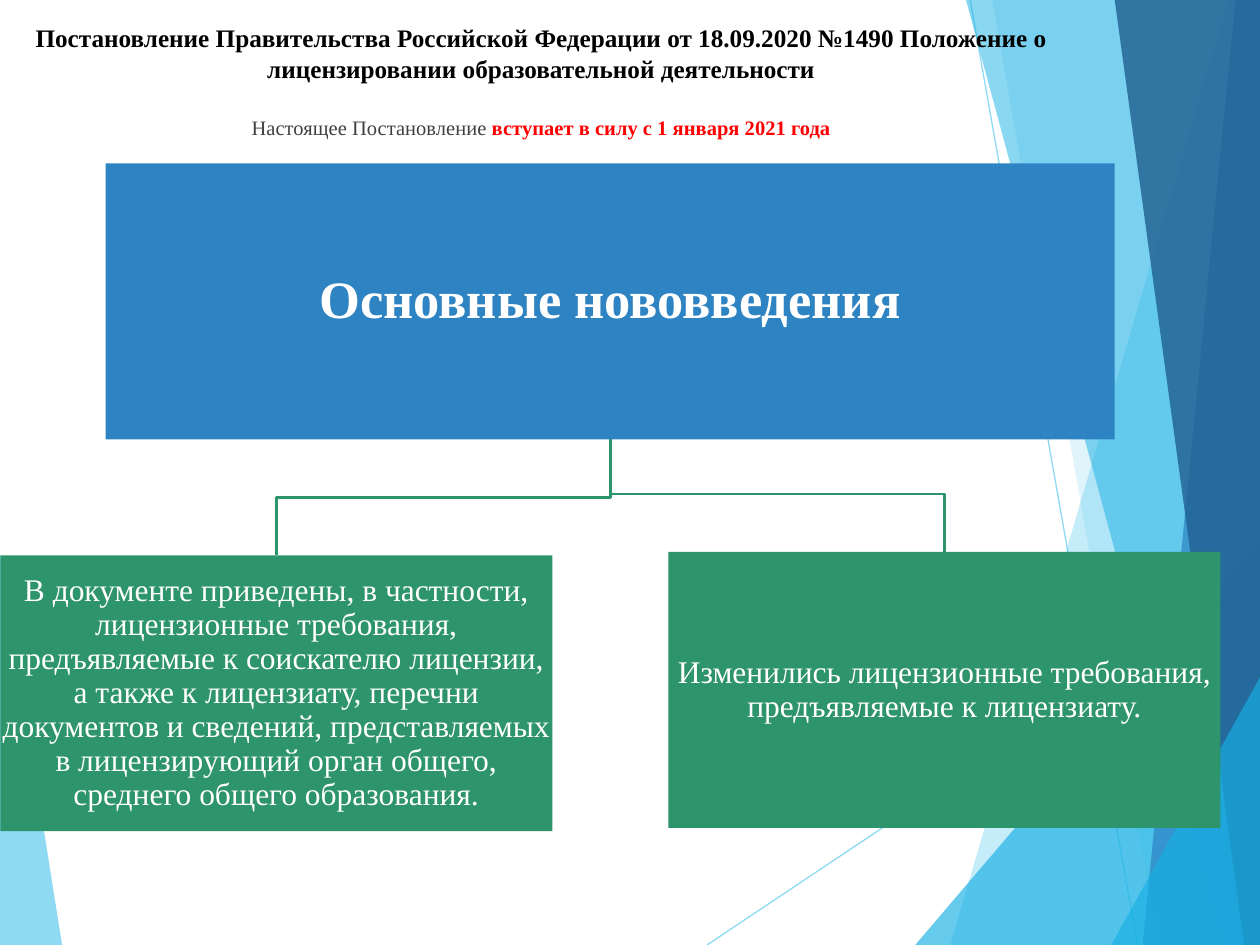
"""Builds a slide on the new licensing rules as a two-branch chart."""
from pptx import Presentation
from pptx.dml.color import RGBColor
from pptx.enum.shapes import MSO_CONNECTOR as Link, MSO_SHAPE as Form
from pptx.enum.text import MSO_ANCHOR as Anchor, MSO_AUTO_SIZE as Fit, PP_ALIGN as Align
from pptx.oxml import parse_xml
from pptx.oxml.ns import nsdecls, qn
from pptx.util import Pt

WHITE = RGBColor(0xFF, 0xFF, 0xFF)
BLACK = RGBColor(0, 0, 0)
GREY = RGBColor(0x40, 0x40, 0x40)
RED = RGBColor(0xFF, 0, 0)
SKY = RGBColor(0x5F, 0xCB, 0xEF)
CYAN = RGBColor(0x17, 0xB0, 0xE4)
BLUE = RGBColor(0x2E, 0x83, 0xC3)
NAVY = RGBColor(0x22, 0x62, 0x92)
GREEN = RGBColor(0x2E, 0x94, 0x6B)
WIDE, HIGH = 720, 540


def assign(item, values):
    """Set each attribute of an item from a dict."""
    for name, value in values.items():
        setattr(item, name, value)


def fade(props, alpha):
    """Give a solid colour an opacity in percent."""
    tint = f'<a:alpha {nsdecls("a")} val="{alpha * 1000}"/>'
    props.find(".//" + qn("a:srgbClr")).append(parse_xml(tint))


class Board:
    """Holds the text style and the current slide."""

    def __init__(self, slide, face):
        self.shapes, self.face = slide.shapes, face

    def label(self, para, text, size, color, bold=False):
        """Add a styled run to a paragraph."""
        run = para.add_run()
        run.text = text
        assign(run.font, {"name": self.face, "size": Pt(size), "bold": bold})
        run.font.color.rgb = color

    def trace(self, points, close):
        """Draw an outline through points."""
        start, *rest = [(Pt(x), Pt(y)) for x, y in points]
        pen = self.shapes.build_freeform(*start)
        pen.add_line_segments(rest, close=close)
        shape = pen.convert_to_shape()
        shape.shadow.inherit = False
        return shape

    def paint(self, shape, color):
        """Fill a shape and drop its outline."""
        shape.fill.solid()
        shape.fill.fore_color.rgb = color
        shape.line.fill.background()

    def band(self, x, y, foot, color, alpha, edge=WIDE):
        """Fill the area between a slant and a slide edge."""
        shape = self.trace([(x, y), (foot, HIGH), (edge, HIGH), (edge, y)], True)
        self.paint(shape, color)
        fade(shape._element.spPr, alpha)

    def ray(self, *ends):
        """Draw a thin pale line."""
        link = self.shapes.add_connector(Link.STRAIGHT, *map(Pt, ends))
        link.line.width = Pt(0.75)
        link.line.color.rgb = SKY
        props = link._element.spPr
        fade(props, 70)
        props.append(parse_xml(f'<a:effectLst {nsdecls("a")}/>'))

    def title(self, place, head, parts):
        """Place the title with a line of parts below."""
        title = self.shapes.title
        self.shapes._spTree.append(title._element)
        assign(title, dict(zip(("left", "top", "width", "height"), map(Pt, place))))
        frame = title.text_frame
        assign(frame, {"word_wrap": True, "auto_size": Fit.NONE,
                       "vertical_anchor": Anchor.TOP})
        first, second = frame.paragraphs[0], frame.add_paragraph()
        for para, gap in (first, 0), (second, 18):
            assign(para, {"alignment": Align.CENTER, "space_before": Pt(gap)})
        self.label(first, head, 14.4, BLACK, True)
        for part in parts:
            self.label(second, *part)

    def box(self, place, color, text, size, pad, bold=False):
        """Draw a filled box with centred text."""
        shape = self.shapes.add_shape(Form.RECTANGLE, *map(Pt, place))
        shape.shadow.inherit = False
        self.paint(shape, color)
        frame = shape.text_frame
        sides = ("left", "top", "right", "bottom")
        assign(frame, {f"margin_{side}": Pt(pad) for side in sides})
        assign(frame, {"word_wrap": True, "vertical_anchor": Anchor.MIDDLE})
        para = frame.paragraphs[0]
        assign(para, {"alignment": Align.CENTER, "line_spacing": 0.9})
        self.label(para, text, size, WHITE, bold)

    def branch(self, x, y, foot, end):
        """Draw an elbow line from a parent to a child."""
        bend = end - 33
        shape = self.trace([(x, y), (x, bend), (foot, bend), (foot, end)], False)
        shape.fill.background()
        shape.line.color.rgb = GREEN
        shape.line.width = Pt(1.5)


def main():
    """Build and save the slide."""
    deck = Presentation()
    assign(deck, {"slide_width": Pt(WIDE), "slide_height": Pt(HIGH)})
    board = Board(deck.slides.add_slide(deck.slide_layouts[5]), "Times New Roman")

    board.band(0, 316, 35.5, SKY, 70, edge=0)
    board.ray(404, HIGH, WIDE, 329)
    board.ray(554.4, 0, 650, HIGH)
    for band in (
        (702, 0, 543, SKY, 36),
        (567, 0, 662, SKY, 20),
        (WIDE, 309, 523, CYAN, 66),
        (552, 0, 698, CYAN, 50),
        (706, 0, 653, BLUE, 70),
        (637, 0, 711, NAVY, 82),
        (WIDE, 387, 635, CYAN, 66),
    ):
        board.band(*band)

    board.title(
        (8.6, 9.4, 601.2, 62.6),
        "Постановление Правительства Российской Федерации от 18.09.2020 №1490 "
        "Положение о лицензировании образовательной деятельности",
        [("Настоящее Постановление ", 11.7, GREY),
         ("вступает в силу с 1 января 2021 года", 11.7, RED, True)],
    )

    left, top, span, tall, wide = 60.4, 93.4, 576.6, 157.7, 315.4
    leaves = (
        (382, 315.4, "Изменились лицензионные требования, предъявляемые к лицензиату."),
        (0.2, 317.3,
         "В документе приведены, в частности, лицензионные требования, "
         "предъявляемые к соискателю лицензии, а также к лицензиату, перечни "
         "документов и сведений, представляемых в лицензирующий орган общего, "
         "среднего общего образования."),
    )
    for x, y, _ in leaves:
        board.branch(left + span / 2, top + tall, x + wide / 2, y)
    board.box((left, top, span, tall), BLUE, "Основные нововведения", 30, 1.5, True)
    for x, y, text in leaves:
        board.box((x, y, wide, tall), GREEN, text, 18, 0.9)
    deck.save("out.pptx")


if __name__ == "__main__":
    main()
